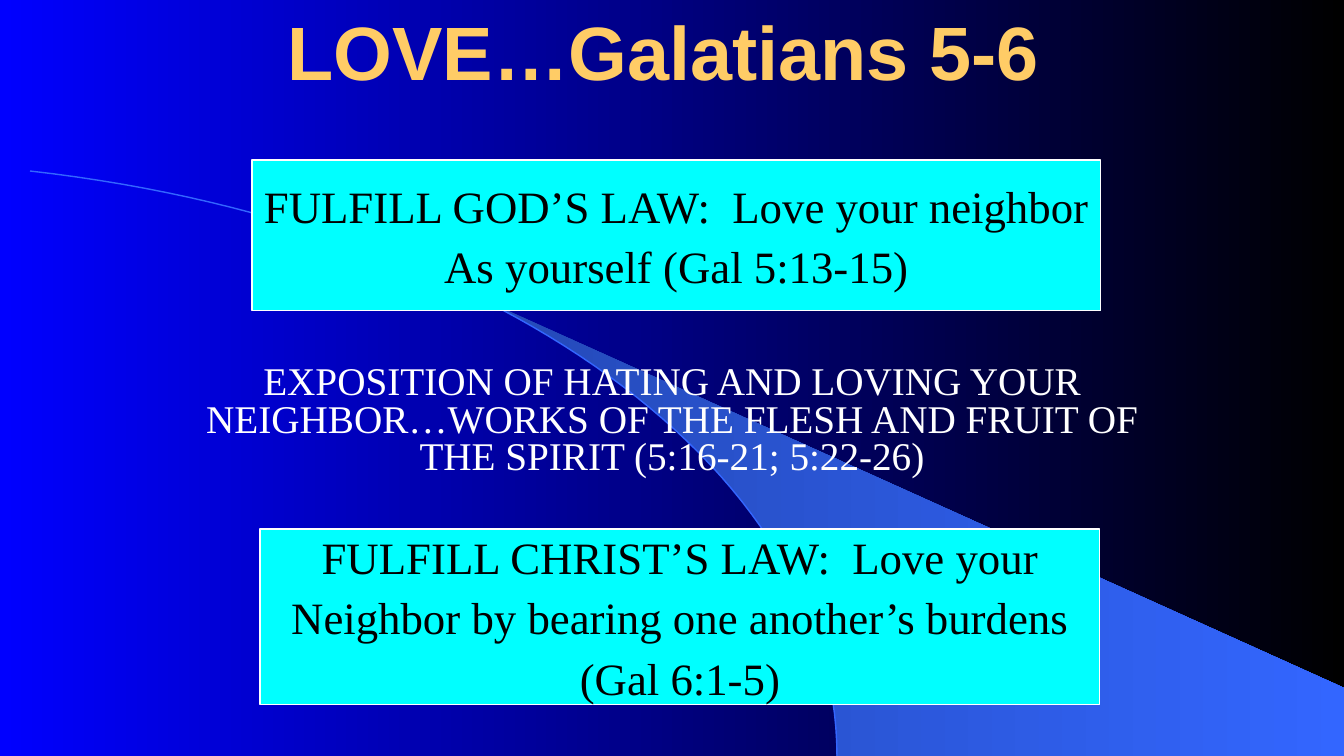
from pptx import Presentation
from pptx.dml.color import RGBColor
from pptx.enum.shapes import MSO_SHAPE
from pptx.enum.text import MSO_ANCHOR, PP_ALIGN
from pptx.util import Emu, Pt

EMU_PER_PX = 914400 / 100.8
SLIDE_WIDTH, SLIDE_HEIGHT = 1344, 756

BLUE = RGBColor(0x00, 0x00, 0xFF)
BLACK = RGBColor(0x00, 0x00, 0x00)
WHITE = RGBColor(0xFF, 0xFF, 0xFF)
GOLD = RGBColor(0xFF, 0xCC, 0x66)
CYAN = RGBColor(0x00, 0xFF, 0xFF)
DEEP_BLUE = RGBColor(0x24, 0x49, 0xB6)
SKY_BLUE = RGBColor(0x33, 0x66, 0xFF)

SANS, SERIF = "Arial", "Times New Roman"
RECTANGLE = MSO_SHAPE.RECTANGLE
MIDDLE, BOTTOM = MSO_ANCHOR.MIDDLE, MSO_ANCHOR.BOTTOM
CENTER = PP_ALIGN.CENTER

ARC_CONTROLS = ((30, 171), (498, 224), (837, 470), (837, 756))
WEDGE_START = 0.36  # share of the arc at which the wedge begins
ARC_STEPS = 60


def px(length):
    return Emu(round(length * EMU_PER_PX))


def fill_gradient(fill, left_color, right_color):
    fill.gradient()
    fill.gradient_angle = 0
    for stop, position, color in zip(fill.gradient_stops, (0, 1), (left_color, right_color)):
        stop.position = position
        stop.color.rgb = color


def arc_points(start):
    """Points of the cubic arc from the given share of it to its end."""
    points = []
    for step in range(ARC_STEPS + 1):
        t = start + (1 - start) * step / ARC_STEPS
        weights = ((1 - t) ** 3, 3 * t * (1 - t) ** 2, 3 * t ** 2 * (1 - t), t ** 3)
        points.append(tuple(
            sum(weight * control[axis] for weight, control in zip(weights, ARC_CONTROLS))
            for axis in (0, 1)
        ))
    return points


def add_outline(slide, points, close):
    builder = slide.shapes.build_freeform(
        *(px(value) for value in points[0]), scale=1.0)
    builder.add_line_segments([(px(x), px(y)) for x, y in points[1:]], close=close)
    shape = builder.convert_to_shape()
    shape.shadow.inherit = False
    return shape


def add_backdrop(slide):
    fill_gradient(slide.background.fill, BLUE, BLACK)

    wedge_points = arc_points(WEDGE_START) + [(SLIDE_WIDTH, SLIDE_HEIGHT), (SLIDE_WIDTH, 688)]
    wedge = add_outline(slide, wedge_points, close=True)
    fill_gradient(wedge.fill, DEEP_BLUE, SKY_BLUE)
    wedge.line.fill.background()

    arc = add_outline(slide, arc_points(0), close=False)
    arc.fill.background()
    arc.line.color.rgb = SKY_BLUE
    arc.line.width = Pt(1)


def write_lines(frame, lines, size, color, font=SERIF, bold=False,
                line_spacing=1.0, space_before=0):
    for index, line in enumerate(lines):
        paragraph = frame.add_paragraph() if index else frame.paragraphs[0]
        paragraph.alignment = CENTER
        paragraph.line_spacing = line_spacing
        paragraph.space_before = Pt(space_before)
        run = paragraph.add_run()
        run.text = line
        run.font.name = font
        run.font.size = Pt(size)
        run.font.bold = bold
        run.font.color.rgb = color


def add_text(slide, box, anchor):
    frame = slide.shapes.add_textbox(*map(px, box)).text_frame
    frame.word_wrap = True
    frame.vertical_anchor = anchor
    return frame


def add_title(slide, box):
    frame = add_text(slide, box, BOTTOM)
    write_lines(frame, ["LOVE…Galatians 5-6"], 54, GOLD, font=SANS, bold=True)


def add_exposition(slide, box):
    frame = add_text(slide, box, MIDDLE)
    frame.margin_top = px(15)
    write_lines(
        frame,
        ["EXPOSITION OF HATING AND LOVING YOUR NEIGHBOR…WORKS OF THE FLESH "
         "AND FRUIT OF THE SPIRIT (5:16-21; 5:22-26)"],
        28, WHITE, line_spacing=0.8)


def add_law_panel(slide, box, lines):
    panel = slide.shapes.add_shape(RECTANGLE, *map(px, box))
    panel.shadow.inherit = False
    panel.fill.solid()
    panel.fill.fore_color.rgb = CYAN
    panel.line.color.rgb = WHITE
    panel.line.width = Pt(0.75)
    frame = panel.text_frame
    frame.word_wrap = False
    frame.vertical_anchor = MIDDLE
    write_lines(frame, lines, 32, BLACK, space_before=5)


def main():
    presentation = Presentation()
    presentation.slide_width = px(SLIDE_WIDTH)
    presentation.slide_height = px(SLIDE_HEIGHT)
    slide = presentation.slides.add_slide(presentation.slide_layouts[6])

    add_backdrop(slide)
    add_title(slide, (235, 0, 857, 101))
    add_exposition(slide, (168, 320, 1008, 194))
    add_law_panel(slide, (252, 160, 849, 151), [
        "FULFILL GOD’S LAW:  Love your neighbor",
        "As yourself (Gal 5:13-15)",
    ])
    add_law_panel(slide, (260, 529, 840, 176), [
        "FULFILL CHRIST’S LAW:  Love your",
        "Neighbor by bearing one another’s burdens",
        "(Gal 6:1-5)",
    ])
    presentation.save("out.pptx")


if __name__ == "__main__":
    main()
